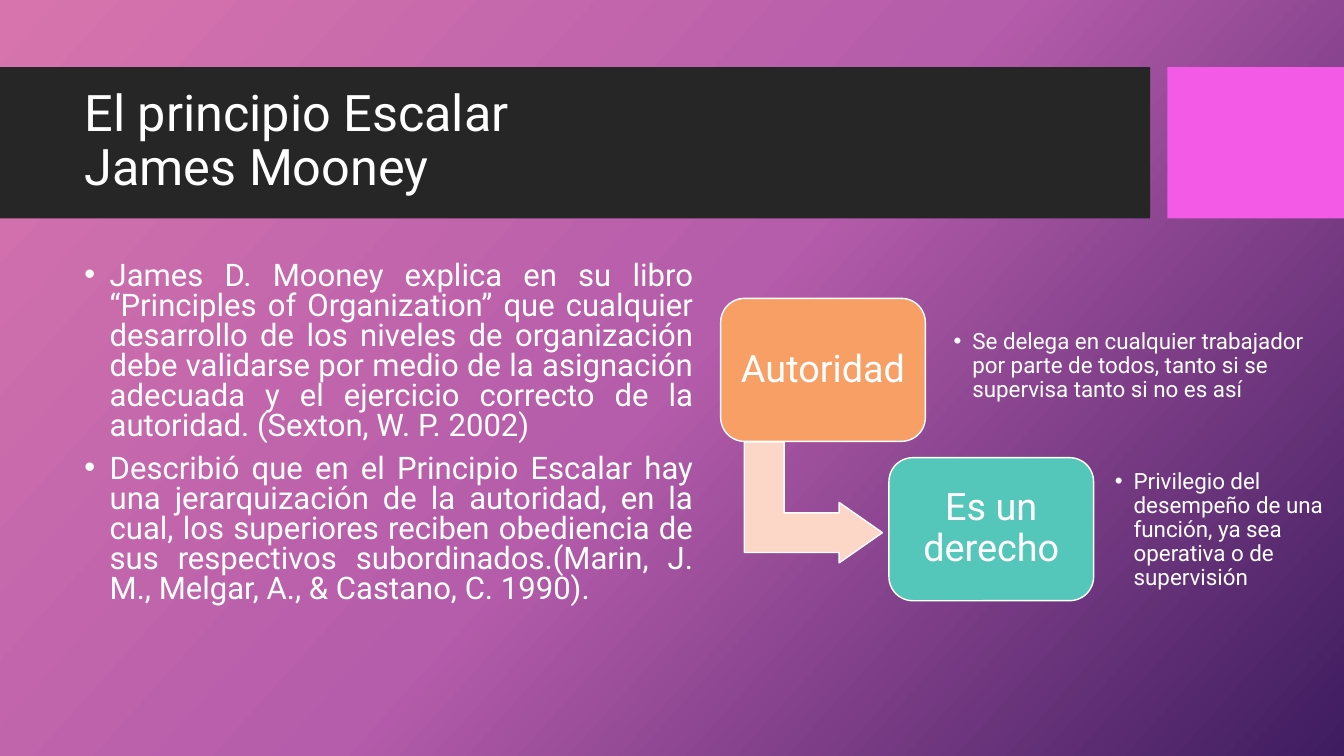
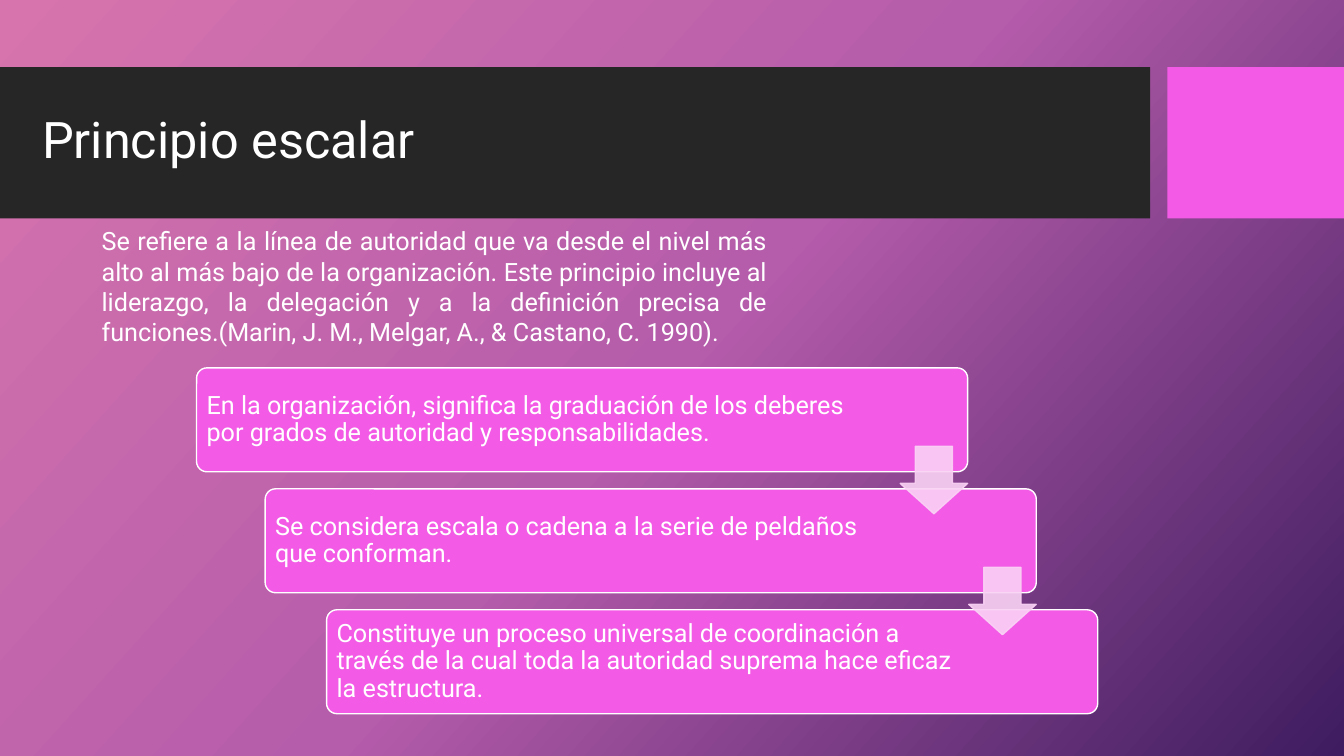
import copy
from dataclasses import dataclass

import pptx
import pptx.dml.color
import pptx.enum.shapes
import pptx.enum.text
import pptx.oxml.ns
import pptx.util
from lxml import etree

Pt = pptx.util.Pt
qn = pptx.oxml.ns.qn
RGB = pptx.dml.color.RGBColor.from_string
SHAPE = pptx.enum.shapes.MSO_SHAPE
ALIGN = pptx.enum.text.PP_ALIGN
ANCHOR = pptx.enum.text.MSO_ANCHOR


@dataclass(frozen=True)
class Theme:
    font: str = "Roboto"
    text: str = "FFFFFF"
    band: str = "262626"
    accent: str = "F35AE6"
    step_arrow: str = "FAD2F5"
    orange: str = "F89F65"
    teal: str = "55C6BA"
    bent_arrow: str = "FCD6C6"
    gradient: tuple = ((0, "D774AD"), (0.5, "B55CAB"), (1, "3E1C5F"))
    gradient_angle: int = 42
    title_size: float = 36
    box_size: float = 27
    body_size: float = 22.2
    step_size: float = 18
    note_size: float = 16


THEME = Theme()


def set_background(master):
    """Give every slide the diagonal three-colour gradient."""
    fill = master.background.fill
    fill.gradient()
    fill.gradient_angle = 360 - THEME.gradient_angle
    gs_list = next(master.element.iter(qn("a:gsLst")))
    gs_list.append(copy.deepcopy(gs_list[-1]))
    for stop, (position, color) in zip(fill.gradient_stops, THEME.gradient):
        stop.position = position
        stop.color.rgb = RGB(color)


def add_bullet(p, indent):
    pPr = p._p.get_or_add_pPr()
    pPr.set("marL", str(Pt(indent)))
    pPr.set("indent", str(-Pt(indent)))
    etree.SubElement(pPr, qn("a:buFont"), typeface="Arial")
    etree.SubElement(pPr, qn("a:buChar"), char="•")


def write(sp, paragraphs, size, align=ALIGN.LEFT, anchor=ANCHOR.MIDDLE,
          spacing=0.9, margins=(7.2, 3.6, 7.2, 3.6), indent=0, gap=0):
    """Fill a shape with text; margins run left, top, right, bottom."""
    tf = sp.text_frame
    tf.word_wrap = True
    tf.vertical_anchor = anchor
    tf.margin_left, tf.margin_top, tf.margin_right, tf.margin_bottom = map(Pt, margins)
    for i, text in enumerate(paragraphs):
        p = tf.add_paragraph() if i else tf.paragraphs[0]
        p.text = text
        if indent:
            add_bullet(p, indent)
        p.alignment = align
        p.line_spacing = spacing
        if i and gap:
            p.space_before = Pt(gap)
        for r in p.runs:
            r.font.name = THEME.font
            r.font.size = Pt(size)
            r.font.color.rgb = RGB(THEME.text)


def add_text(slide, at, paragraphs, size, **style):
    sp = slide.shapes.add_textbox(*map(Pt, at))
    write(sp, paragraphs, size, **style)


def add_shape(slide, kind, at, fill, line=None, adjustments=()):
    sp = slide.shapes.add_shape(kind, *map(Pt, at))
    sp.shadow.inherit = False
    sp.fill.solid()
    sp.fill.fore_color.rgb = RGB(fill)
    if line:
        sp.line.color.rgb = RGB(line)
        sp.line.width = Pt(1)
    else:
        sp.line.fill.background()
    for i, value in enumerate(adjustments):
        sp.adjustments[i] = value
    return sp


def set_opacity(sp, percent):
    for color in sp._element.spPr.iter(qn("a:srgbClr")):
        etree.SubElement(color, qn("a:alpha"), val=str(percent * 1000))


def add_slide(prs, title, title_left):
    slide = prs.slides.add_slide(prs.slide_layouts[6])
    add_shape(slide, SHAPE.RECTANGLE, (0, 48, 821.6, 108), THEME.band)
    add_shape(slide, SHAPE.RECTANGLE, (833.8, 48, 126.2, 108), THEME.accent)
    add_text(slide, (title_left, 59, 756.7, 85), [title], THEME.title_size)
    return slide


def add_concept(slide, left, top, label, color, note, note_at):
    """Add a labelled rounded box and the bulleted note beside it."""
    sp = add_shape(slide, SHAPE.ROUNDED_RECTANGLE, (left, top, 146.2, 102.2),
                   color, THEME.text, [0.167])
    write(sp, [label], THEME.box_size, align=ALIGN.CENTER, margins=(8,) * 4)
    add_text(slide, note_at, [note], THEME.note_size, margins=(6.5,) * 4, indent=13.5)


def add_staircase(slide, steps):
    """Add descending cards, each linked to the next by an arrow.

    A step is its left edge, right text margin and text.
    """
    top, pitch, width, height = 262.8, 86.4, 550.8, 74.2
    arrow_size, arrow_drop = 48.2, 56
    for i, (left, right_margin, text) in enumerate(steps):
        card = add_shape(slide, SHAPE.ROUNDED_RECTANGLE,
                         (left, top + i * pitch, width, height),
                         THEME.accent, THEME.text, [0.1])
        write(card, [text], THEME.step_size, margins=(5, 5, right_margin, 5))
    for i, (left, _, _) in enumerate(steps[:-1]):
        arrow = add_shape(slide, SHAPE.DOWN_ARROW,
                          (left + width - arrow_size, top + i * pitch + arrow_drop,
                           arrow_size, arrow_size),
                          THEME.step_arrow, THEME.step_arrow, [0.55, 0.45])
        set_opacity(arrow, 90)


def build_mooney(prs):
    slide = add_slide(prs, "El principio Escalar\vJames Mooney", 53.3)
    add_text(slide, (53.3, 184.3, 449.3, 281.5), [
        "James D. Mooney explica en su libro “Principles of Organization” que "
        "cualquier desarrollo de los niveles de organización debe validarse por "
        "medio de la asignación adecuada y el ejercicio correcto de la autoridad. "
        "(Sexton, W. P. 2002)",
        "Describió que en el Principio Escalar hay una jerarquización de la "
        "autoridad, en la cual, los superiores reciben obediencia de sus "
        "respectivos subordinados.(Marin, J. M., Melgar, A., & Castano, C. 1990).",
    ], THEME.body_size, align=ALIGN.JUSTIFY, anchor=ANCHOR.TOP, spacing=0.8,
        indent=18, gap=10)
    arrow = add_shape(slide, SHAPE.BENT_UP_ARROW, (537.8, 309.6, 86.4, 98.6),
                      THEME.bent_arrow, THEME.text, [0.328, 0.25, 0.358])
    arrow.rotation = 90
    add_concept(slide, 514.8, 213.1, "Autoridad", THEME.orange,
                "Se delega en cualquier trabajador por parte de todos, tanto si se "
                "supervisa tanto si no es así", (674.6, 226, 272.2, 71.3))
    add_concept(slide, 635, 326.9, "Es un derecho", THEME.teal,
                "Privilegio del desempeño de una función, ya sea operativa o de "
                "supervisión", (789.8, 329, 170, 99.4))


def build_scalar_principle(prs):
    slide = add_slide(prs, "Principio escalar", 23)
    add_staircase(slide, [
        (140.4, 80, "En la organización, significa la graduación de los deberes por "
                    "grados de autoridad y responsabilidades."),
        (189.4, 101, "Se considera escala o cadena a la serie de peldaños que "
                     "conforman."),
        (233.3, 101, "Constituye un proceso universal de coordinación a través de la "
                     "cual toda la autoridad suprema hace eficaz la estructura."),
    ])
    add_text(slide, (65.5, 157.7, 489.6, 116.6), [
        "Se refiere a la línea de autoridad que va desde el nivel más alto al más "
        "bajo de la organización. Este principio incluye al liderazgo, la "
        "delegación y a la definición precisa de funciones.(Marin, J. M., Melgar, "
        "A., & Castano, C. 1990).",
    ], THEME.step_size, align=ALIGN.JUSTIFY, anchor=ANCHOR.TOP, spacing=1.0)


def main():
    prs = pptx.Presentation()
    prs.slide_width, prs.slide_height = Pt(960), Pt(540)
    set_background(prs.slide_master)
    build_mooney(prs)
    build_scalar_principle(prs)
    prs.save("out.pptx")


if __name__ == "__main__":
    main()
